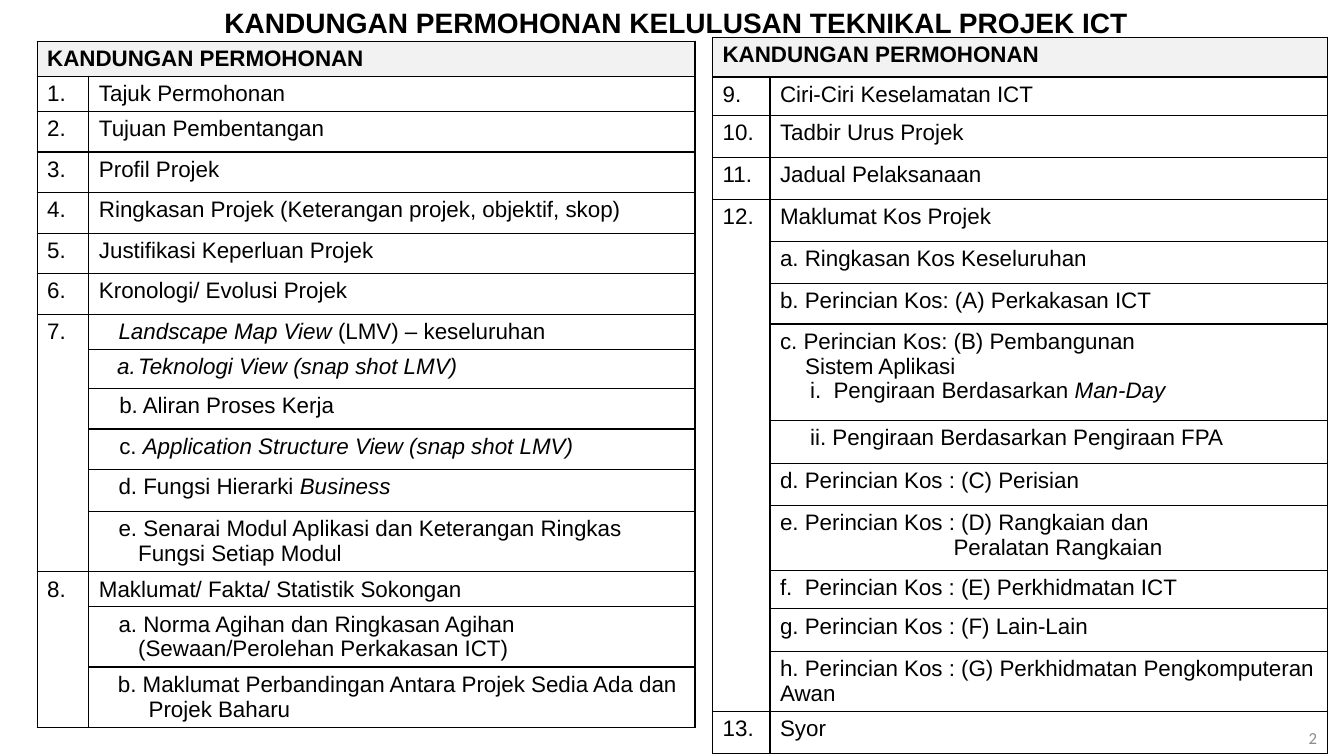
from pptx import Presentation
from pptx.dml.color import RGBColor
from pptx.enum.text import MSO_ANCHOR as ANCHOR, PP_ALIGN as ALIGN
from pptx.oxml import parse_xml
from pptx.oxml.ns import nsdecls
from pptx.util import Pt

COLORS = {"text": "000000", "border": "000000", "header": "F2F2F2",
          "cell": "FFFFFF", "number": "8C8C8C"}
TITLE = "KANDUNGAN PERMOHONAN KELULUSAN TEKNIKAL PROJEK ICT"
HEADER = "KANDUNGAN PERMOHONAN"

# Rows: height, number (blank continues the item above), paragraphs.
# Paragraphs: text with *italic* parts, left margin, first-line indent.
LEFT_ROWS = [
    (25, "1.", [("Tajuk Permohonan", 0, 0)]),
    (29, "2.", [("Tujuan Pembentangan", 0, 0)]),
    (29, "3.", [("Profil Projek", 0, 0)]),
    (29, "4.", [("Ringkasan Projek (Keterangan projek, objektif, skop)", 0, 0)]),
    (29, "5.", [("Justifikasi Keperluan Projek", 0, 0)]),
    (29, "6.", [("Kronologi/ Evolusi Projek", 0, 0)]),
    (25, "7.", [("*Landscape Map View *(LMV) – keseluruhan", 14, 0)]),
    (28, "", [("#*Teknologi View (snap shot LMV)*", 28, -15)]),
    (29, "", [("b. Aliran Proses Kerja", 14.5, 0)]),
    (29, "", [("c. *Application Structure View (snap shot LMV)*", 14.5, 0)]),
    (30, "", [("d. Fungsi Hierarki *Business*", 35.5, -21.5)]),
    (43, "", [("e. Senarai Modul Aplikasi dan Keterangan Ringkas "
               "Fungsi Setiap Modul", 28, -14)]),
    (25, "8.", [("Maklumat/ Fakta/ Statistik Sokongan", 14, -14)]),
    (43, "", [("a. Norma Agihan dan Ringkasan Agihan "
               "(Sewaan/Perolehan Perkakasan ICT)", 28, -14)]),
    (43, "", [("b. Maklumat Perbandingan Antara Projek Sedia Ada dan "
               "Projek Baharu", 35.5, -22)]),
]
RIGHT_ROWS = [
    (27.5, "9.", [("Ciri-Ciri Keselamatan ICT", 0, 0)]),
    (30, "10.", [("Tadbir Urus Projek", 0, 0)]),
    (30, "11.", [("Jadual Pelaksanaan", 0, 0)]),
    (30, "12.", [("Maklumat Kos Projek", 0, 0)]),
    (30, "", [("a. Ringkasan Kos Keseluruhan", 0, 0)]),
    (29, "", [("b. Perincian Kos: (A) Perkakasan ICT", 0, 0)]),
    (69, "", [("c. Perincian Kos: (B) Pembangunan", 0, 0),
              ("Sistem Aplikasi", 18, 0),
              ("i.  Pengiraan Berdasarkan *Man-Day*", 0, 21.5)]),
    (30.5, "", [("ii. Pengiraan Berdasarkan Pengiraan FPA", 0, 21.5)]),
    (30, "", [("d. Perincian Kos : (C) Perisian", 0, 0)]),
    (46.5, "", [("e. Perincian Kos : (D) Rangkaian dan", 0, 0),
                ("Peralatan Rangkaian", 124, 0)]),
    (27.5, "", [("f.  Perincian Kos : (E) Perkhidmatan ICT", 0, 0)]),
    (30.5, "", [("g. Perincian Kos : (F) Lain-Lain", 0, 0)]),
    (42, "", [("h. Perincian Kos : (G) Perkhidmatan Pengkomputeran Awan", 0, 0)]),
    (30, "13.", [("Syor", 0, 0)]),
]
# Tables: left, top, column widths, header height, rows
TABLES = [(26.5, 29.5, (37, 433), 25, LEFT_ROWS),
          (509, 26.5, (41, 398), 28.5, RIGHT_ROWS)]


def rgb(name):
    return RGBColor.from_string(COLORS[name])


def style(font, size, bold=False, color="text", name="Arial"):
    font.name, font.size, font.bold = name, Pt(size), bold
    font.color.rgb = rgb(color)


def write(p, text, margin=0, indent=0, bold=False):
    """Fill a paragraph; # numbers it with a letter, * toggles italics."""
    pPr = p._p.get_or_add_pPr()
    pPr.set("marL", str(Pt(margin)))
    pPr.set("indent", str(Pt(indent)))
    if text.startswith("#"):
        pPr.append(parse_xml(
            f'<a:buFont {nsdecls("a")} typeface="+mj-lt"/>'))
        pPr.append(parse_xml(
            f'<a:buAutoNum {nsdecls("a")} type="alphaLcPeriod"/>'))
    for i, piece in enumerate(text.lstrip("#").split("*")):
        if piece:
            r = p.add_run()
            r.text = piece
            style(r.font, 16, bold)
            r.font.italic = i % 2 == 1


def format_cell(cell, fill):
    tcPr = cell._tc.get_or_add_tcPr()
    for side in "LRTB":
        tcPr.append(parse_xml(
            f'<a:ln{side} {nsdecls("a")} w="{Pt(1)}"><a:solidFill>'
            f'<a:srgbClr val="{COLORS["border"]}"/></a:solidFill></a:ln{side}>'))
    cell.fill.solid()
    cell.fill.fore_color.rgb = rgb(fill)
    cell.vertical_anchor = ANCHOR.TOP


def add_contents(s, left, top, widths, header_height, rows):
    heights = [header_height] + [row[0] for row in rows]
    table = s.shapes.add_table(len(heights), 2, Pt(left), Pt(top),
                               Pt(sum(widths)), Pt(sum(heights))).table
    table.first_row = table.horz_banding = False
    for column, width in zip(table.columns, widths):
        column.width = Pt(width)
    for i, height in enumerate(heights):
        table.rows[i].height = Pt(height)
        for cell in table.rows[i].cells:
            format_cell(cell, "cell" if i else "header")
    write(table.cell(0, 0).text_frame.paragraphs[0], HEADER, bold=True)
    table.cell(0, 0).merge(table.cell(0, 1))

    # Item numbers and contents
    starts = []
    for i, (_, number, paragraphs) in enumerate(rows, 1):
        if number:
            starts.append(i)
            write(table.cell(i, 0).text_frame.paragraphs[0], number)
        tf = table.cell(i, 1).text_frame
        for j, paragraph in enumerate(paragraphs):
            write(tf.add_paragraph() if j else tf.paragraphs[0], *paragraph)

    # Each number spans its sub-items
    for start, end in zip(starts, starts[1:] + [len(heights)]):
        if end - start > 1:
            table.cell(start, 0).merge(table.cell(end - 1, 0))


prs = Presentation()
prs.slide_width, prs.slide_height = Pt(960), Pt(540)
s = prs.slides.add_slide(prs.slide_layouts[5])

# Title
title = s.shapes.title
title.left, title.top, title.width, title.height = Pt(3), Pt(0), Pt(960), Pt(84)
tf = title.text_frame
tf.text = TITLE
tf.vertical_anchor = ANCHOR.TOP
tf.paragraphs[0].alignment = ALIGN.CENTER
style(tf.paragraphs[0].runs[0].font, 20, bold=True)

# Contents tables
for layout in TABLES:
    add_contents(s, *layout)

# Slide number
sp = s.shapes.add_textbox(Pt(732), Pt(512.5), Pt(216), Pt(29))
tf = sp.text_frame
tf.word_wrap = True
tf.vertical_anchor = ANCHOR.MIDDLE
p = tf.paragraphs[0]
p.alignment = ALIGN.RIGHT
r = p.add_run()
r.text = "2"
style(r.font, 12, color="number", name="Calibri")

prs.save("out.pptx")
